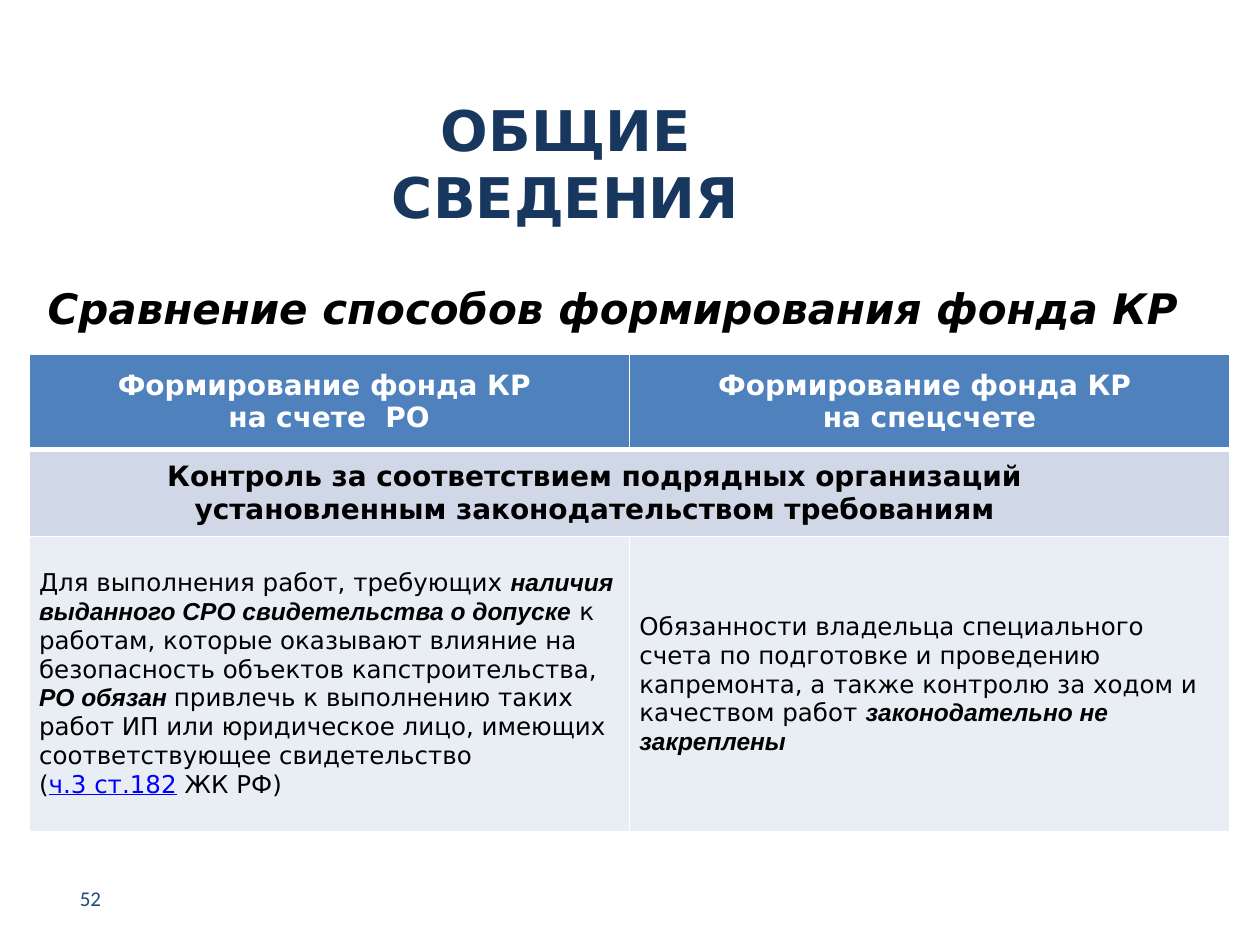
from lxml import etree
from pptx import Presentation
from pptx.dml.color import RGBColor
from pptx.enum.text import MSO_ANCHOR, PP_ALIGN
from pptx.oxml.ns import qn
from pptx.util import Inches, Pt

LEFT, CENTER, RIGHT = PP_ALIGN.LEFT, PP_ALIGN.CENTER, PP_ALIGN.RIGHT
TOP, MIDDLE = MSO_ANCHOR.TOP, MSO_ANCHOR.MIDDLE
MAIN_FONT, ACCENT_FONT = "DejaVu Sans", "Arial"
COLORS = {
    "title": "17375E",
    "number": "1F497D",
    "text": "000000",
    "white": "FFFFFF",
    "link": "0000FF",
    "header": "4F81BD",
    "banner": "D0D8E8",
    "body": "E9EDF4",
}
HEADERS = [
    ["Формирование фонда КР ", "на счете  РО"],
    ["Формирование фонда КР ", "на спецсчете"],
]
BANNER = [
    "Контроль за соответствием подрядных организаций",
    "установленным законодательством требованиям",
]
REGIONAL_OPERATOR = [
    [
        ("Для выполнения работ, требующих ", "plain"),
        ("наличия выданного СРО свидетельства о допуске", "accent"),
        (" к работам, которые оказывают влияние на безопасность объектов капстроительства, ", "plain"),
        ("РО обязан ", "accent"),
        ("привлечь к выполнению таких работ ИП или юридическое лицо, "
         "имеющих соответствующее свидетельство", "plain"),
    ],
    [("(", "plain"), ("ч.3 ст.182", "link"), (" ЖК РФ)", "plain")],
]
SPECIAL_ACCOUNT = [
    [
        ("Обязанности владельца специального счета по подготовке и проведению "
         "капремонта, а также контролю за ходом и качеством работ ", "plain"),
        ("законодательно не закреплены", "accent"),
    ],
]


def style_font(font, size, color, name=MAIN_FONT, bold=False, italic=False):
    """Set the look of a font."""
    font.size, font.name, font.bold, font.italic = Pt(size), name, bold, italic
    font.color.rgb = RGBColor.from_string(COLORS[color])


def add_label(slide, box, text, align, anchor, **look):
    """Place one paragraph of text in a box."""
    frame = slide.shapes.add_textbox(*map(Inches, box)).text_frame
    frame.word_wrap = True
    frame.vertical_anchor = anchor
    frame.text = text
    paragraph = frame.paragraphs[0]
    paragraph.alignment = align
    style_font(paragraph.runs[0].font, **look)


def style_cell(cell, fill, top=1, bottom=1):
    """Give a cell its white borders, margins and fill."""
    properties = cell._tc.get_or_add_tcPr()
    for side, width in (("L", 1), ("R", 1), ("T", top), ("B", bottom)):
        line = etree.SubElement(properties, qn(f"a:ln{side}"), w=str(Pt(width)))
        solid = etree.SubElement(line, qn("a:solidFill"))
        etree.SubElement(solid, qn("a:srgbClr"), val=COLORS["white"])
    cell.fill.solid()
    cell.fill.fore_color.rgb = RGBColor.from_string(COLORS[fill])
    cell.margin_left = cell.margin_right = Inches(0.08)
    cell.margin_top = cell.margin_bottom = Inches(0.04)
    cell.vertical_anchor = MIDDLE


def write_heading(cell, lines, color):
    """Write centred bold lines in a cell."""
    cell.text_frame.text = "\n".join(lines)
    for paragraph in cell.text_frame.paragraphs:
        paragraph.alignment = CENTER
        style_font(paragraph.runs[0].font, 16, color, bold=True)


def write_rich_text(cell, paragraphs):
    """Write paragraphs of plain, accented and link-like runs."""
    frame = cell.text_frame
    for index, pieces in enumerate(paragraphs):
        paragraph = frame.add_paragraph() if index else frame.paragraphs[0]
        paragraph.alignment = LEFT
        for text, kind in pieces:
            run = paragraph.add_run()
            run.text = text
            accent, link = kind == "accent", kind == "link"
            style_font(run.font, 14, "link" if link else "text",
                       ACCENT_FONT if accent else MAIN_FONT, accent, accent)
            run.font.underline = link


def add_comparison(slide, box):
    """Build the table that compares the two ways of forming the fund."""
    table = slide.shapes.add_table(3, 2, *map(Inches, box)).table
    for column in table.columns:
        column.width = Inches(box[2] / 2)
    for row, height in zip(table.rows, (0.76, 0.69, 2.34)):
        row.height = Inches(height)
    for column in range(2):
        style_cell(table.cell(0, column), "header", bottom=3)
        style_cell(table.cell(1, column), "banner", top=3)
        style_cell(table.cell(2, column), "body")
        write_heading(table.cell(0, column), HEADERS[column], "white")
    banner = table.cell(1, 0)
    banner.merge(table.cell(1, 1))
    write_heading(banner, BANNER, "text")
    first_line = banner.text_frame.paragraphs[0]
    first_line._p.get_or_add_pPr().set("marR", str(Inches(0.55)))
    write_rich_text(table.cell(2, 0), REGIONAL_OPERATOR)
    write_rich_text(table.cell(2, 1), SPECIAL_ACCOUNT)


def main():
    """Build and save the slide."""
    presentation = Presentation()
    presentation.slide_width, presentation.slide_height = Inches(10), Inches(7.5)
    slide = presentation.slides.add_slide(presentation.slide_layouts[6])
    add_label(slide, (2.42, 0.55, 4.14, 1.48), "ОБЩИЕ СВЕДЕНИЯ", CENTER, MIDDLE,
              size=32, color="title", bold=True)
    add_label(slide, (0.28, 2.19, 9.57, 0.55), "Сравнение способов формирования фонда КР",
              LEFT, TOP, size=24, color="text", bold=True, italic=True)
    add_label(slide, (0.35, 6.93, 0.55, 0.4), "52", RIGHT, MIDDLE,
              size=12, color="number", name="Calibri")
    add_comparison(slide, (0.23, 2.81, 9.53, 3.83))
    presentation.save("out.pptx")


if __name__ == "__main__":
    main()
